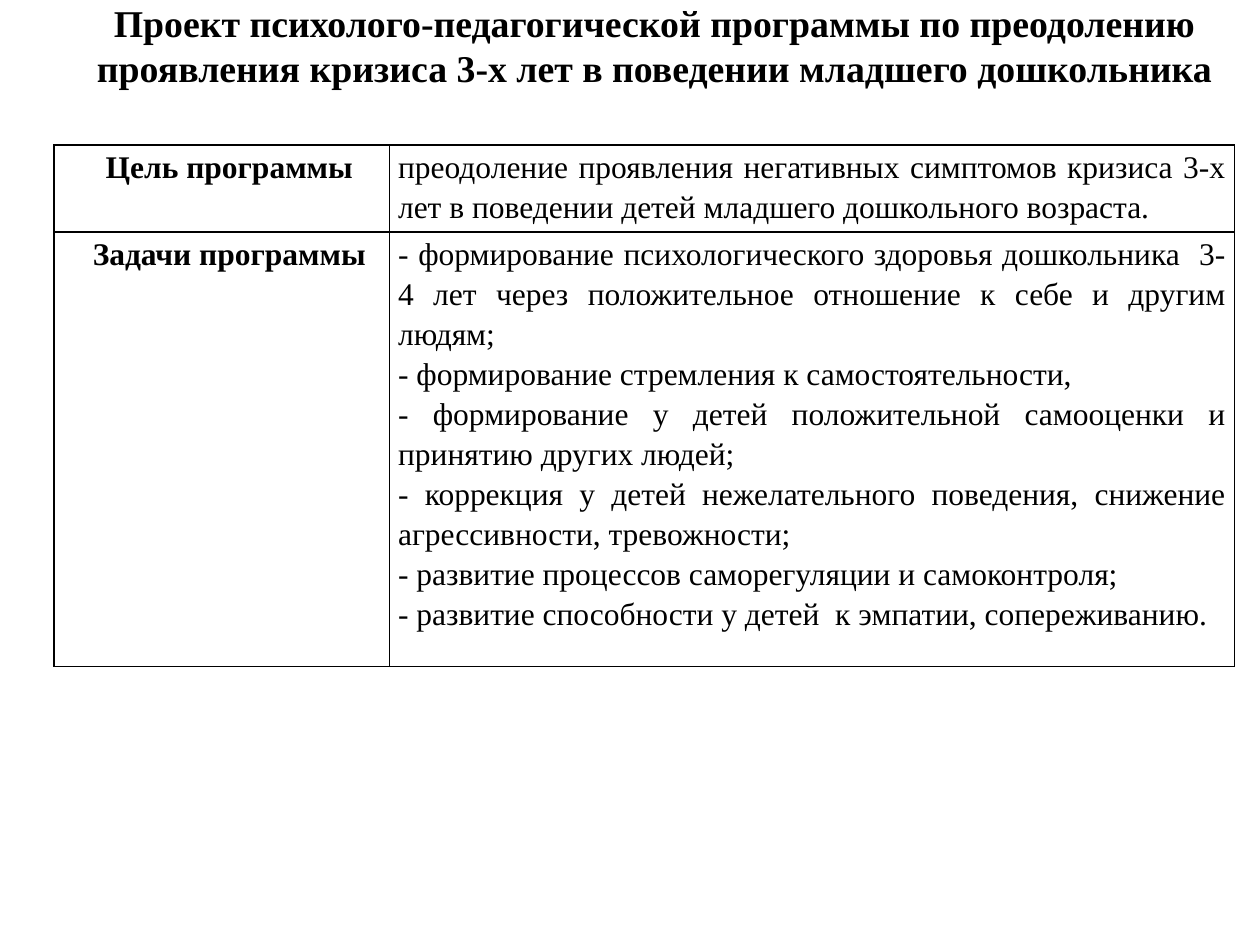
"""Build the slide with the goal and tasks of the programme."""
from dataclasses import dataclass

from lxml.etree import SubElement
from pptx import Presentation
from pptx.dml.color import RGBColor
from pptx.enum.text import MSO_ANCHOR, PP_ALIGN as Align
from pptx.oxml.ns import qn
from pptx.util import Inches, Pt

BLACK = RGBColor(0, 0, 0)
FONT = "Times New Roman"
TITLE = ("Проект психолого-педагогической программы по преодолению "
         "проявления кризиса 3-х лет в поведении младшего дошкольника")


@dataclass
class Part:
    """A table row with its heading and body lines."""
    head: str
    lines: list[str]
    height: float


PARTS = [
    Part("Цель программы", [
        "преодоление проявления негативных симптомов кризиса 3-х лет "
        "в поведении детей младшего дошкольного возраста.",
    ], 0.64),
    Part("Задачи программы", [
        "- формирование психологического здоровья дошкольника  3-4 лет "
        "через положительное отношение к себе и другим людям;",
        "- формирование стремления к самостоятельности,",
        "- формирование у детей положительной самооценки и принятию других людей;",
        "- коррекция у детей нежелательного поведения, снижение агрессивности, тревожности;",
        "- развитие процессов саморегуляции и самоконтроля;",
        "- развитие способности у детей  к эмпатии, сопереживанию.",
    ], 3.18),
]
WIDTHS = [2.66, 6.71]


def style(para, size: float, bold: bool, align: Align) -> None:
    """Set the alignment and font of a paragraph."""
    para.alignment = align
    for run in para.runs:
        font = run.font
        font.name, font.size, font.bold = FONT, Pt(size), bold
        font.color.rgb = BLACK


def frame(cell) -> None:
    """Give a cell thin black borders and no fill."""
    props = cell._tc.get_or_add_tcPr()
    for side in ("a:lnL", "a:lnR", "a:lnT", "a:lnB"):
        line = SubElement(props, qn(side), w=str(Pt(1)))
        fill = SubElement(line, qn("a:solidFill"))
        SubElement(fill, qn("a:srgbClr"), val=str(BLACK))
    cell.fill.background()


def write(cell, lines: list[str], head: bool) -> None:
    """Fill a cell with one paragraph for each line."""
    cell.margin_left = cell.margin_right = Inches(0.07)
    cell.margin_top = cell.margin_bottom = 0
    cell.text_frame.text = "\n".join(lines)
    for para in cell.text_frame.paragraphs:
        para.line_spacing = 1.15
        style(para, 18, head, Align.CENTER if head else Align.JUSTIFY)
        if head:
            para._p.get_or_add_pPr().set("indent", str(Inches(0.12)))
    frame(cell)


def add_title(slide) -> None:
    """Add the heading of the slide."""
    box = slide.shapes.add_textbox(Inches(0.39), Inches(-0.16), Inches(9.61), Inches(1.03))
    text = box.text_frame
    text.word_wrap = True
    text.vertical_anchor = MSO_ANCHOR.MIDDLE
    text.text = TITLE
    style(text.paragraphs[0], 21.6, True, Align.CENTER)


def add_grid(slide, parts: list[Part]) -> None:
    """Add the table of programme parts."""
    total = sum(part.height for part in parts)
    grid = slide.shapes.add_table(len(parts), len(WIDTHS), Inches(0.43), Inches(1.15),
                                  Inches(sum(WIDTHS)), Inches(total)).table
    grid.first_row = grid.horz_banding = False
    for col, width in zip(grid.columns, WIDTHS):
        col.width = Inches(width)
    for row, part in zip(grid.rows, parts):
        row.height = Inches(part.height)
        write(row.cells[0], [part.head], True)
        write(row.cells[1], part.lines, False)


def main() -> None:
    """Build and save the deck."""
    deck = Presentation()
    deck.slide_width, deck.slide_height = Inches(10), Inches(7.5)
    slide = deck.slides.add_slide(deck.slide_layouts[6])
    add_title(slide)
    add_grid(slide, PARTS)
    deck.save("out.pptx")


if __name__ == "__main__":
    main()
